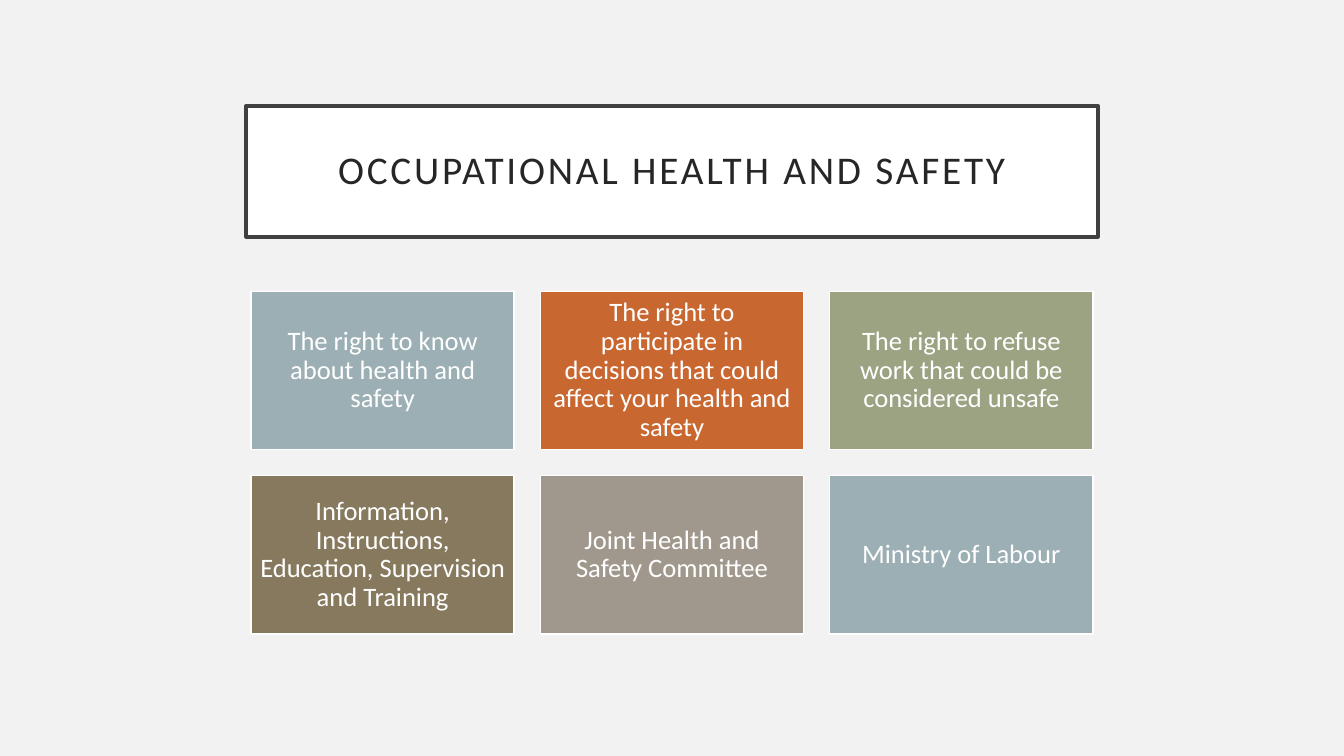
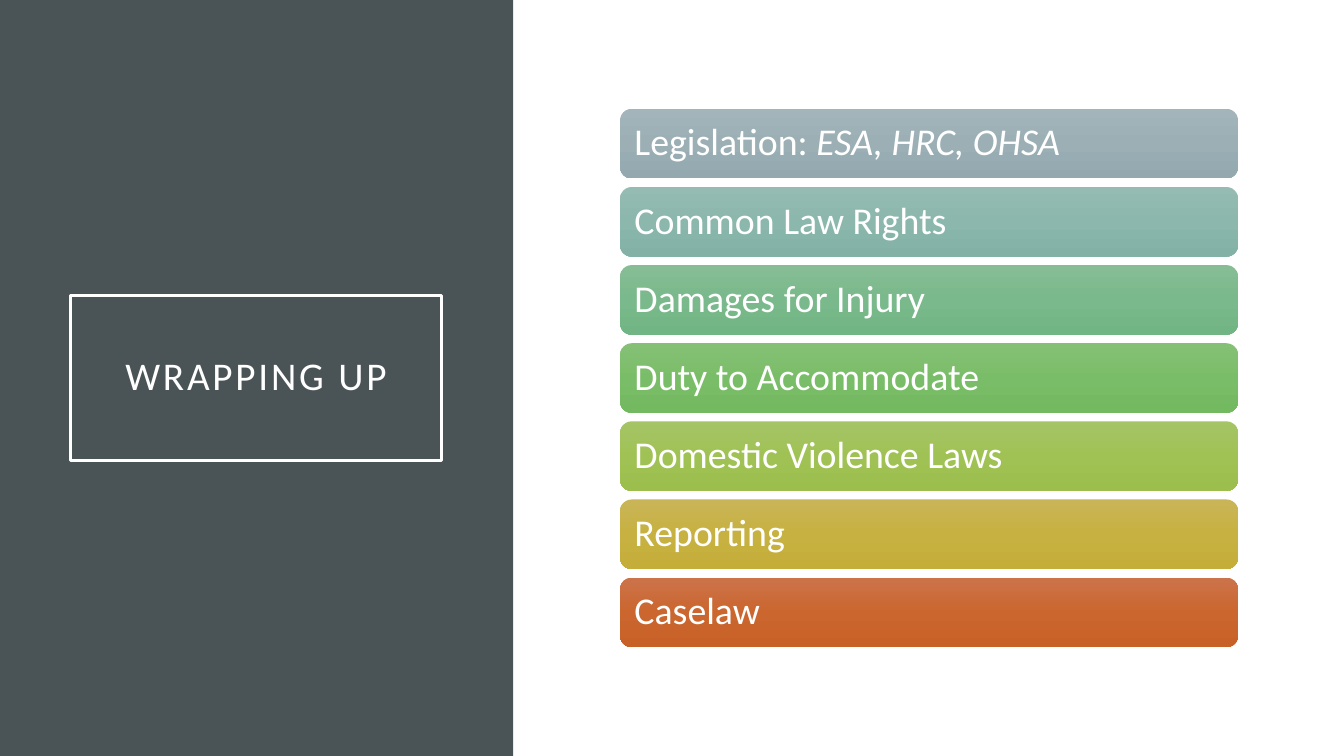
import copy
from dataclasses import dataclass

import pptx
import pptx.dml.color
import pptx.enum.shapes
import pptx.enum.text
import pptx.oxml.ns
import pptx.presentation
import pptx.shapes.autoshape
import pptx.slide
import pptx.util
from pptx.util import Inches

SLIDE_WIDTH, SLIDE_HEIGHT = 13.33, 7.5
FONT = "Calibri"
TITLE_ONLY = 5
COLORS = {
    "white": "FFFFFF",
    "page": "F2F2F2",
    "frame": "404040",
    "ink": "262626",
    "panel": "4A5356",
    "blue": "9BAFB5",
    "orange": "C96731",
    "green": "9CA383",
    "brown": "87795D",
    "taupe": "A0988C",
}
ALIGN = pptx.enum.text.PP_ALIGN
SHAPE = pptx.enum.shapes.MSO_SHAPE


@dataclass(frozen=True)
class Box:
    left: float
    top: float
    width: float
    height: float


@dataclass(frozen=True)
class Card:
    text: str
    color: str


@dataclass(frozen=True)
class Topic:
    text: str
    gradient: tuple[str, str, str]
    italic_text: str = ""


CARDS = [
    Card("The right to know about health and safety", "blue"),
    Card("The right to participate in decisions that could affect your health and safety", "orange"),
    Card("The right to refuse work that could be considered unsafe", "green"),
    Card("Information, Instructions, Education, Supervision and Training", "brown"),
    Card("Joint Health and Safety Committee", "taupe"),
    Card("Ministry of Labour", "blue"),
]

TOPICS = [
    Topic("Legislation: ", ("A3B5BB", "9BAFB5", "93A9AF"), "ESA, HRC, OHSA"),
    Topic("Common Law Rights", ("95BBB2", "8BB7AC", "83B1A6")),
    Topic("Damages for Injury", ("86BD95", "7AB98B", "72B584")),
    Topic("Duty to Accommodate", ("85C076", "7ABD68", "73B960")),
    Topic("Domestic Violence Laws", ("A5C466", "A0C255", "9BBE4D")),
    Topic("Reporting", ("C9B557", "C7B141", "C4AD39")),
    Topic("Caselaw", ("CC734B", "CB662F", "C86128")),
]


def rgb(value: str) -> pptx.dml.color.RGBColor:
    return pptx.dml.color.RGBColor.from_string(COLORS.get(value, value))


def write_text(
    shape: pptx.shapes.autoshape.Shape,
    text: str,
    *,
    size: float,
    color: str = "white",
    align: ALIGN = ALIGN.CENTER,
    inset: float = 0.08,
    italic_text: str = "",
    letter_spacing: float = 0,
) -> None:
    frame = shape.text_frame
    frame.word_wrap = True
    frame.auto_size = pptx.enum.text.MSO_AUTO_SIZE.NONE
    frame.vertical_anchor = pptx.enum.text.MSO_ANCHOR.MIDDLE
    frame.margin_left = frame.margin_right = Inches(inset)
    frame.margin_top = frame.margin_bottom = Inches(inset)
    paragraph = frame.paragraphs[0]
    paragraph.alignment = align
    paragraph.line_spacing = 0.9
    for words, italic in ((text, False), (italic_text, True)):
        if not words:
            continue
        run = paragraph.add_run()
        run.text = words
        run.font.name = FONT
        run.font.size = pptx.util.Pt(size)
        run.font.italic = italic
        run.font.color.rgb = rgb(color)
        if letter_spacing:
            run._r.get_or_add_rPr().set("spc", str(round(letter_spacing * 100)))


def paint(
    shape: pptx.shapes.autoshape.Shape,
    fill: str | None = None,
    line: str | None = None,
    line_width: float = 1,
) -> None:
    if fill:
        shape.fill.solid()
        shape.fill.fore_color.rgb = rgb(fill)
    else:
        shape.fill.background()
    if line:
        shape.line.color.rgb = rgb(line)
        shape.line.width = pptx.util.Pt(line_width)
    else:
        shape.line.fill.background()


def paint_gradient(shape: pptx.shapes.autoshape.Shape, colors: tuple[str, ...]) -> None:
    shape.fill.gradient()
    shape.fill.gradient_angle = 270
    stop_list = shape.element.spPr.find(".//" + pptx.oxml.ns.qn("a:gsLst"))
    while len(stop_list) < len(colors):
        stop_list.append(copy.deepcopy(stop_list[0]))
    for index, (stop, color) in enumerate(zip(shape.fill.gradient_stops, colors)):
        stop.position = index / (len(colors) - 1)
        stop.color.rgb = rgb(color)


def add_box(slide: pptx.slide.Slide, kind: SHAPE, box: Box) -> pptx.shapes.autoshape.Shape:
    shape = slide.shapes.add_shape(
        kind, Inches(box.left), Inches(box.top), Inches(box.width), Inches(box.height)
    )
    shape.shadow.inherit = False
    paint(shape)
    return shape


def add_titled_slide(
    deck: pptx.presentation.Presentation,
    text: str,
    box: Box,
    *,
    background: str,
    text_color: str,
    frame_color: str,
    fill: str | None = None,
) -> pptx.slide.Slide:
    slide = deck.slides.add_slide(deck.slide_layouts[TITLE_ONLY])
    slide.background.fill.solid()
    slide.background.fill.fore_color.rgb = rgb(background)
    title = slide.shapes.title
    title.left, title.top = Inches(box.left), Inches(box.top)
    title.width, title.height = Inches(box.width), Inches(box.height)
    paint(title, fill, frame_color, 2.5)
    write_text(title, text, size=28, color=text_color, inset=0.2, letter_spacing=2)
    return slide


def build_safety_slide(deck: pptx.presentation.Presentation) -> None:
    slide = add_titled_slide(
        deck,
        "OCCUPATIONAL HEALTH AND SAFETY",
        Box(2.44, 1.05, 8.45, 1.3),
        background="page",
        text_color="ink",
        frame_color="frame",
        fill="white",
    )
    columns, width, height, gap, top = 3, 2.61, 1.57, 0.26, 2.89
    left = (SLIDE_WIDTH - columns * width - (columns - 1) * gap) / 2
    for index, card in enumerate(CARDS):
        row, column = divmod(index, columns)
        box = Box(left + column * (width + gap), top + row * (height + gap), width, height)
        tile = add_box(slide, SHAPE.RECTANGLE, box)
        paint(tile, card.color, "white")
        write_text(tile, card.text, size=19)


def build_wrap_up_slide(deck: pptx.presentation.Presentation) -> None:
    slide = add_titled_slide(
        deck,
        "WRAPPING UP",
        Box(0.7, 2.93, 3.68, 1.64),
        background="white",
        text_color="white",
        frame_color="white",
    )
    panel = add_box(slide, SHAPE.RECTANGLE, Box(0, 0, 5.09, SLIDE_HEIGHT))
    paint(panel, "panel")
    slide.shapes.title.element.addprevious(panel.element)

    first_top, last_top, height = 1.08, 5.73, 0.69
    pitch = (last_top - first_top) / (len(TOPICS) - 1)
    for index, topic in enumerate(TOPICS):
        box = Box(6.15, first_top + index * pitch, 6.13, height)
        bar = add_box(slide, SHAPE.ROUNDED_RECTANGLE, box)
        paint_gradient(bar, topic.gradient)
        write_text(
            bar,
            topic.text,
            size=27,
            align=ALIGN.LEFT,
            inset=0.11,
            italic_text=topic.italic_text,
        )


def main() -> None:
    deck = pptx.Presentation()
    deck.slide_width = Inches(SLIDE_WIDTH)
    deck.slide_height = Inches(SLIDE_HEIGHT)
    build_safety_slide(deck)
    build_wrap_up_slide(deck)
    deck.save("out.pptx")


if __name__ == "__main__":
    main()
